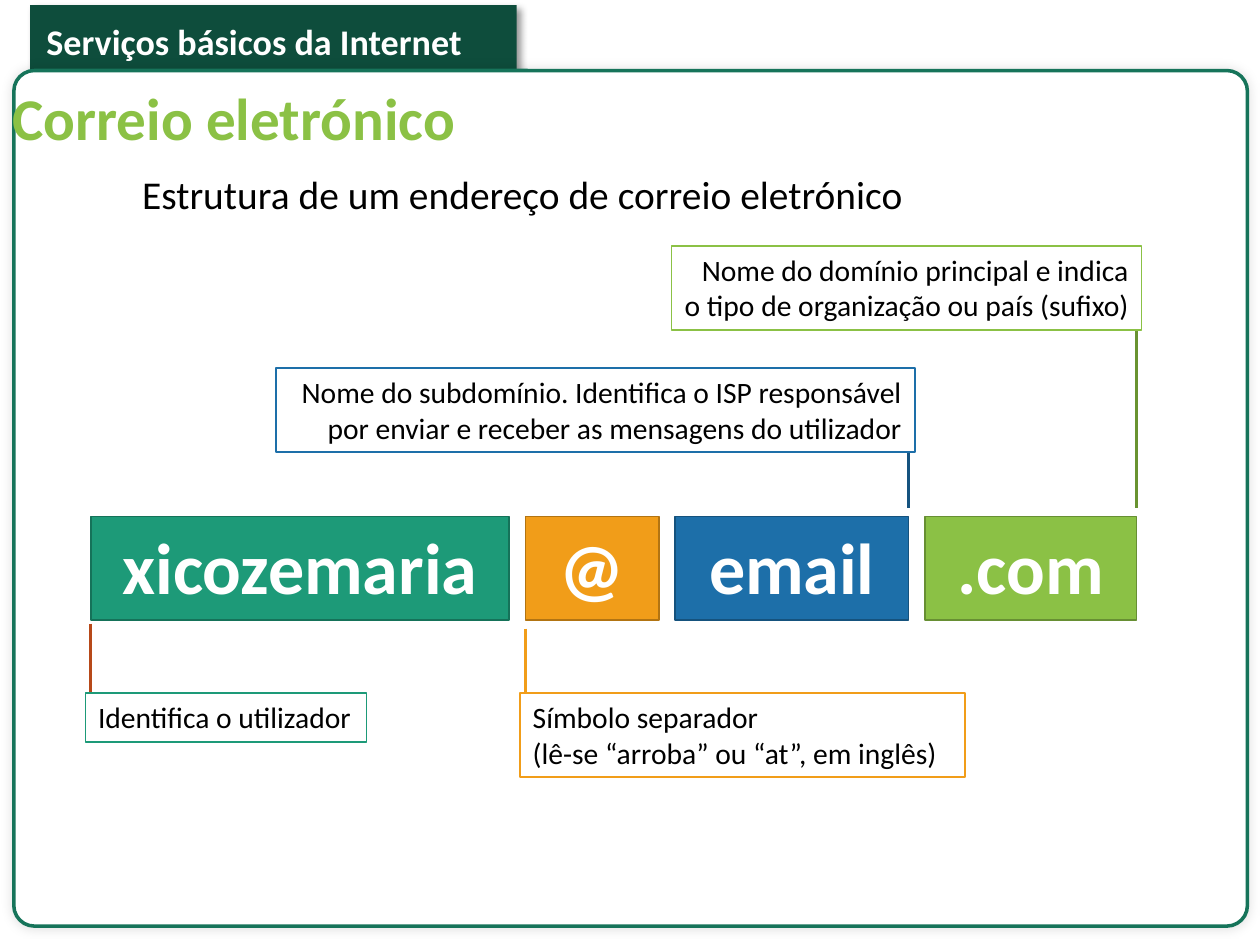
from dataclasses import dataclass

from lxml.etree import SubElement
from pptx import Presentation
from pptx.dml.color import RGBColor
from pptx.enum.shapes import MSO_CONNECTOR as Connector, MSO_SHAPE as Shape
from pptx.enum.text import MSO_ANCHOR as Anchor, PP_ALIGN as Align
from pptx.oxml.ns import qn
from pptx.util import Inches, Pt


@dataclass(frozen=True)
class Theme:
    font: str = "Calibri"
    white: str = "FFFFFF"
    black: str = "000000"
    header: str = "0E4D3C"
    frame: str = "16745A"
    teal: str = "1D9A78"
    teal_edge: str = "157259"
    orange: str = "F19D19"
    orange_edge: str = "B27412"
    blue: str = "1D6FA9"
    blue_edge: str = "15527D"
    green: str = "8BC145"
    green_edge: str = "678F33"
    rust: str = "B74919"
    blue_stem: str = "16537F"
    green_stem: str = "699331"
    header_size: float = 20.6
    title_size: float = 33.8
    subtitle_size: float = 22.5
    part_size: float = 41.2
    note_size: float = 16.9


THEME = Theme()
COLUMNS, ROWS = 100, 75
CELL = Inches(0.1)


def grid(*lengths):
    return [round(length * CELL) for length in lengths]


def write_text(shape, text, size, color=THEME.black, bold=False, align=Align.LEFT,
               anchor=Anchor.TOP, spacing=None, insets=(1, 0.5, 1, 0.5), wrap=True):
    frame = shape.text_frame
    frame.word_wrap = wrap
    frame.vertical_anchor = anchor
    (frame.margin_left, frame.margin_top,
     frame.margin_right, frame.margin_bottom) = grid(*insets)
    paragraph = frame.paragraphs[0]
    paragraph.text = text
    paragraph.alignment = align
    paragraph.line_spacing = spacing
    for run in paragraph.runs:
        run.font.name = THEME.font
        run.font.size = Pt(size)
        run.font.bold = bold
        run.font.color.rgb = RGBColor.from_string(color)


def add_label(slide, box, text, size, **text_format):
    write_text(slide.shapes.add_textbox(*grid(*box)), text, size, **text_format)


def add_box(slide, box, fill, edge=None, width=1, kind=Shape.RECTANGLE):
    shape = slide.shapes.add_shape(kind, *grid(*box))
    shape.shadow.inherit = False
    shape.fill.solid()
    shape.fill.fore_color.rgb = RGBColor.from_string(fill)
    if edge:
        shape.line.color.rgb = RGBColor.from_string(edge)
        shape.line.width = Pt(width)
    else:
        shape.line.fill.background()
    return shape


def add_shadow(shape, opacity, blur, distance, angle):
    effects = shape._element.spPr.find(qn("a:effectLst"))
    shadow = SubElement(effects, qn("a:outerShdw"), blurRad=str(Pt(blur)),
                        dist=str(Pt(distance)), dir=str(angle * 60000),
                        algn="ctr", rotWithShape="0")
    color = SubElement(shadow, qn("a:srgbClr"), val=THEME.black)
    SubElement(color, qn("a:alpha"), val=str(opacity * 1000))


def add_stem(slide, column, top, bottom, color):
    stem = slide.shapes.add_connector(
        Connector.STRAIGHT, *grid(column, top, column, bottom))
    stem.line.color.rgb = RGBColor.from_string(color)
    stem.line.width = Pt(1.75)
    SubElement(stem._element.spPr, qn("a:effectLst"))


def add_note(slide, box, text, edge, stem, **text_format):
    add_stem(slide, *stem)
    write_text(add_box(slide, box, THEME.white, edge), text, THEME.note_size, **text_format)


def add_frame(slide):
    tab = add_box(slide, (2.4, 0.4, 38.6, 6.2), THEME.header)
    add_shadow(tab, 40, 4, 3, 45)
    add_label(slide, (2.7, 0.6, 40.4, 4.9), "Serviços básicos da Internet",
              THEME.header_size, color=THEME.white, bold=True, spacing=Pt(28.1))
    panel = add_box(slide, (1.1, 5.6, 97.9, 67.9), THEME.white, THEME.frame, 2,
                    Shape.ROUNDED_RECTANGLE)
    panel.adjustments[0] = 0.024
    add_shadow(panel, 13, 6, 0, 0)


def add_address(slide, left, top, height, gap):
    parts = (
        ("xicozemaria", 33.2, THEME.teal, THEME.teal_edge),
        ("@", 10.6, THEME.orange, THEME.orange_edge),
        ("email", 18.5, THEME.blue, THEME.blue_edge),
        (".com", 16.8, THEME.green, THEME.green_edge),
    )
    edges = []
    for text, width, fill, edge in parts:
        part = add_box(slide, (left, top, width, height), fill, edge)
        write_text(part, text, THEME.part_size, color=THEME.white, bold=True,
                   align=Align.CENTER, insets=(0.4, 0.5, 0.4, 0.7))
        edges.append((left, left + width))
        left += width + gap
    return edges


def main():
    presentation = Presentation()
    presentation.slide_width, presentation.slide_height = grid(COLUMNS, ROWS)
    slide = presentation.slides.add_slide(presentation.slide_layouts[6])

    add_frame(slide)
    add_label(slide, (0, 6.5, 86.2, 6.2), "Correio eletrónico", THEME.title_size,
              color=THEME.green, bold=True, anchor=Anchor.MIDDLE, spacing=0.9)
    add_label(slide, (10.3, 12.3, 89.7, 19.5),
              "Estrutura de um endereço de correio eletrónico",
              THEME.subtitle_size, spacing=1.2)

    user, separator, subdomain, domain = add_address(slide, 7.2, 41, 8.2, 1.3)
    add_note(slide, (21.9, 29.2, 50.7, 6.7),
             "Nome do subdomínio. Identifica o ISP responsável "
             "por enviar e receber as mensagens do utilizador",
             THEME.blue, (subdomain[1], 35.8, 40.3, THEME.blue_stem), align=Align.RIGHT)
    add_note(slide, (53.3, 19.5, 37.3, 6.7),
             "Nome do domínio principal e indica o tipo de organização ou país (sufixo)",
             THEME.green, (domain[1], 26.1, 40.3, THEME.green_stem), align=Align.RIGHT)
    add_note(slide, (41.3, 55, 35.3, 6.7),
             "Símbolo separador\n(lê-se “arroba” ou “at”, em inglês)",
             THEME.orange, (separator[0], 49.9, 55, THEME.orange))
    add_note(slide, (6.8, 55, 22.3, 3.9), "Identifica o utilizador",
             THEME.teal, (user[0], 49.5, 55, THEME.rust), wrap=False)

    presentation.save("out.pptx")


if __name__ == "__main__":
    main()
